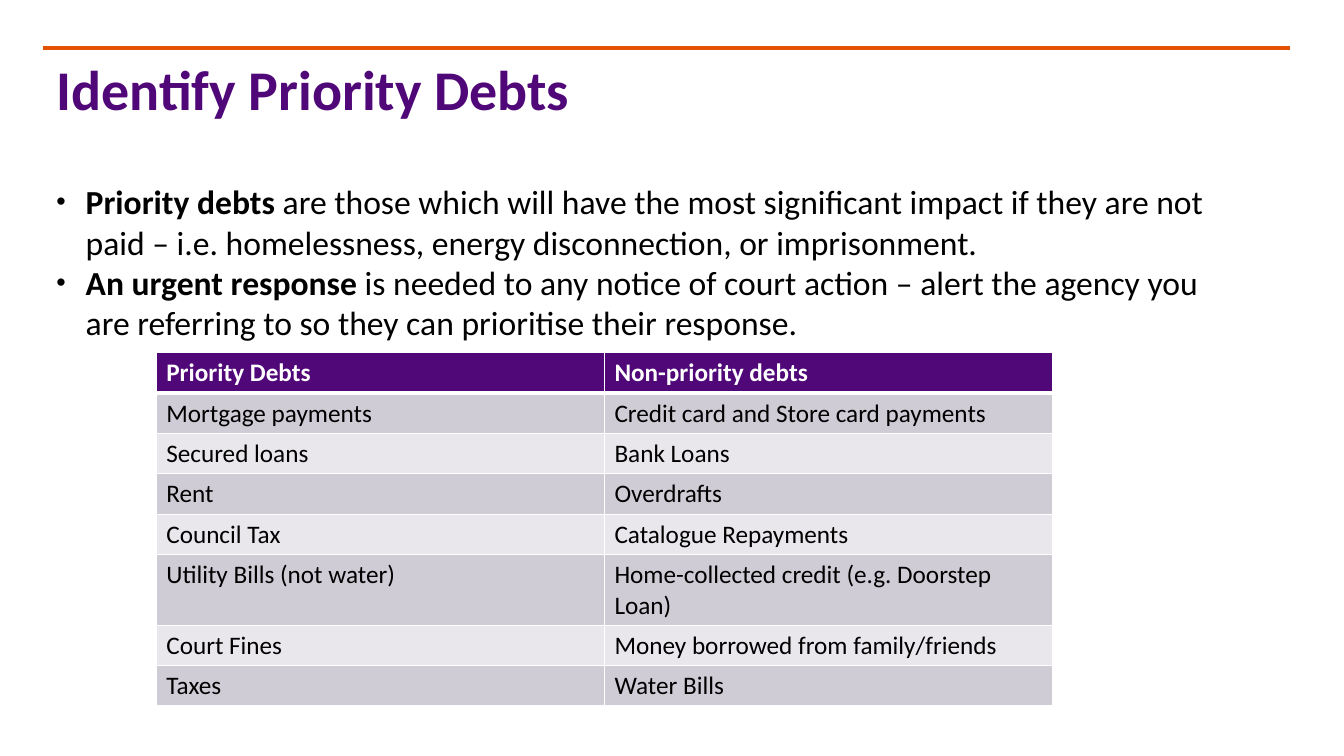
from lxml.etree import SubElement
from pptx import Presentation
from pptx.dml.color import RGBColor
from pptx.enum.shapes import MSO_CONNECTOR
from pptx.enum.text import MSO_ANCHOR
from pptx.oxml.ns import qn
from pptx.util import Inches, Pt

PURPLE, ORANGE, BLACK, WHITE = "500778", "E35205", "000000", "FFFFFF"
BANDS = ("E9E7EC", "D0CCD6")

BULLETS = [
    ("Priority debts ", "are those which will have the most significant impact if they "
     "are not paid – i.e. homelessness, energy disconnection, or imprisonment."),
    ("An urgent response ", "is needed to any notice of court action – alert the agency "
     "you are referring to so they can prioritise their response."),
]
DEBTS = [
    ("Priority Debts", "Non-priority debts"),
    ("Mortgage payments", "Credit card and Store card payments"),
    ("Secured loans", "Bank Loans"),
    ("Rent", "Overdrafts"),
    ("Council Tax", "Catalogue Repayments"),
    ("Utility Bills (not water)", "Home-collected credit (e.g. Doorstep Loan)"),
    ("Court Fines", "Money borrowed from family/friends"),
    ("Taxes", "Water Bills"),
]


def color(value):
    return RGBColor.from_string(value)


def add_run(paragraph, text, size, value, bold):
    run = paragraph.add_run()
    run.text = text
    for name, setting in {"name": "Calibri", "size": Pt(size), "bold": bold}.items():
        setattr(run.font, name, setting)
    run.font.color.rgb = color(value)


def add_text_frame(slide, left, top, width, height, inset_top):
    box = slide.shapes.add_textbox(Inches(left), Inches(top), Inches(width), Inches(height))
    settings = {
        "word_wrap": True,
        "vertical_anchor": MSO_ANCHOR.TOP,
        "margin_left": 0,
        "margin_top": Inches(inset_top),
        "margin_right": Inches(0.1),
        "margin_bottom": Inches(0.05),
    }
    for name, setting in settings.items():
        setattr(box.text_frame, name, setting)
    return box.text_frame


def add_rule(slide, left, top, width):
    rule = slide.shapes.add_connector(
        MSO_CONNECTOR.STRAIGHT, Inches(left), Inches(top), Inches(left + width), Inches(top))
    rule.line.color.rgb = color(ORANGE)
    rule.line.width = Pt(3)
    SubElement(rule._element.spPr, qn("a:effectLst"))


def add_title(slide, left, top, width, height):
    paragraph = add_text_frame(slide, left, top, width, height, 0.16).paragraphs[0]
    paragraph.line_spacing = Pt(41)
    add_run(paragraph, "Identify Priority Debts", 40, PURPLE, True)


def add_bullets(slide, left, top, width, height):
    frame = add_text_frame(slide, left, top, width, height, 0.05)
    for index, (lead, detail) in enumerate(BULLETS):
        paragraph = frame.add_paragraph() if index else frame.paragraphs[0]
        properties = paragraph._p.get_or_add_pPr()
        properties.set("marL", str(Inches(0.29)))
        properties.set("indent", str(-Inches(0.29)))
        SubElement(properties, qn("a:buSzPct"), val="80000")
        SubElement(properties, qn("a:buFont"), typeface="Arial")
        SubElement(properties, qn("a:buChar"), char="•")
        add_run(paragraph, lead, 24, BLACK, True)
        add_run(paragraph, detail, 24, BLACK, False)


def set_borders(cell, header, below_header):
    widths = {"L": 1, "R": 1, "T": 3 if below_header else 1, "B": 3 if header else 1}
    properties = cell._tc.get_or_add_tcPr()
    for side, width in widths.items():
        line = SubElement(properties, qn(f"a:ln{side}"), w=str(Pt(width)))
        fill = SubElement(line, qn("a:solidFill"))
        SubElement(fill, qn("a:srgbClr"), val=WHITE)


def add_debt_table(slide, left, top, width, row_height):
    table = slide.shapes.add_table(
        len(DEBTS), 2, Inches(left), Inches(top), Inches(width),
        Inches(row_height * len(DEBTS))).table
    for row_index, texts in enumerate(DEBTS):
        header = row_index == 0
        table.rows[row_index].height = Inches(row_height)
        for column_index, text in enumerate(texts):
            cell = table.cell(row_index, column_index)
            set_borders(cell, header, row_index == 1)
            cell.fill.solid()
            cell.fill.fore_color.rgb = color(PURPLE if header else BANDS[row_index % 2])
            add_run(cell.text_frame.paragraphs[0], text, 18, WHITE if header else BLACK, header)


def main():
    presentation = Presentation()
    presentation.slide_width = Inches(13.33)
    presentation.slide_height = Inches(7.5)
    slide = presentation.slides.add_slide(presentation.slide_layouts[6])
    add_rule(slide, 0.43, 0.48, 12.36)
    add_title(slide, 0.56, 0.48, 11.85, 1.37)
    add_bullets(slide, 0.56, 1.75, 11.85, 1.7)
    add_debt_table(slide, 1.55, 3.5, 8.89, 0.4)
    presentation.save("out.pptx")


if __name__ == "__main__":
    main()
